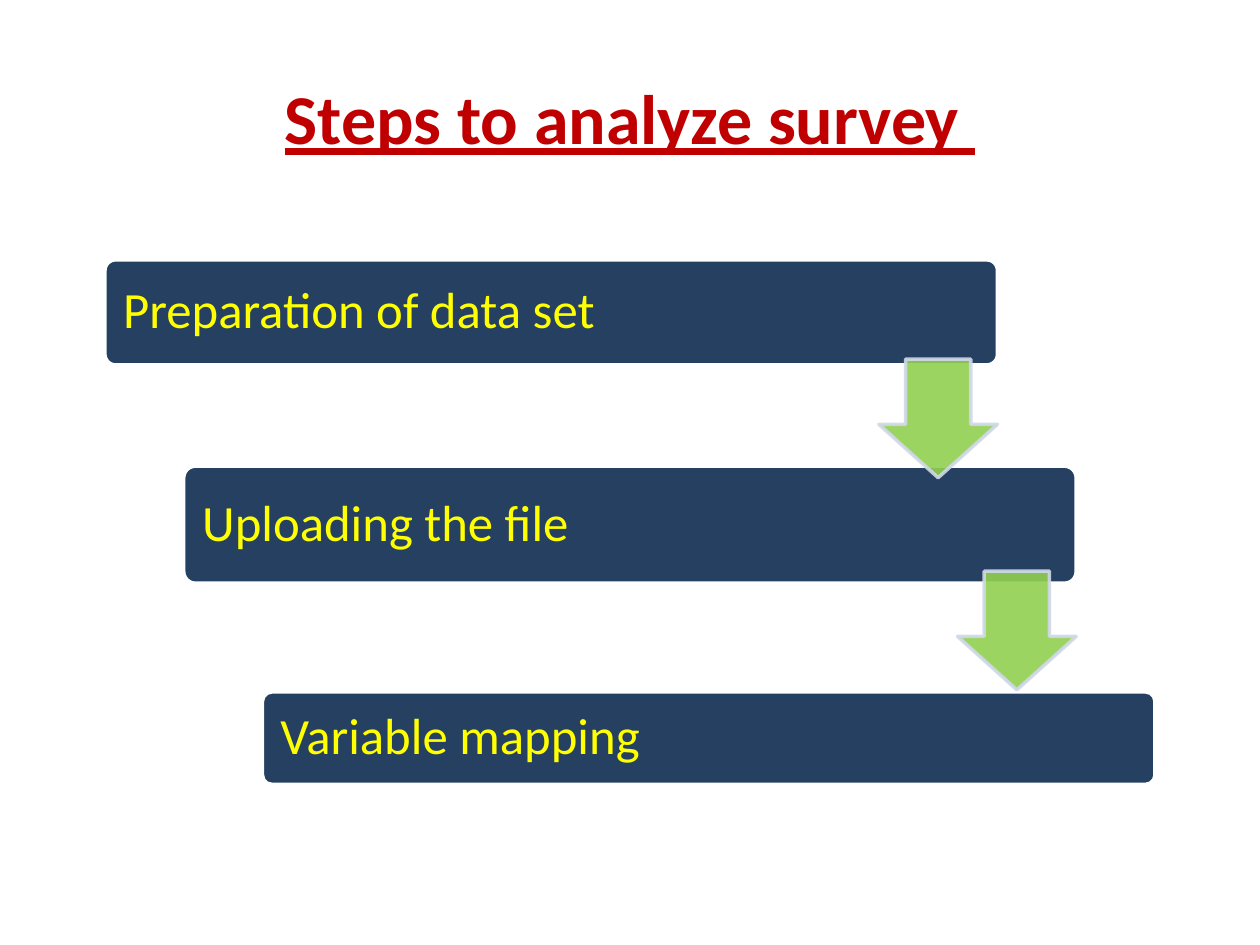
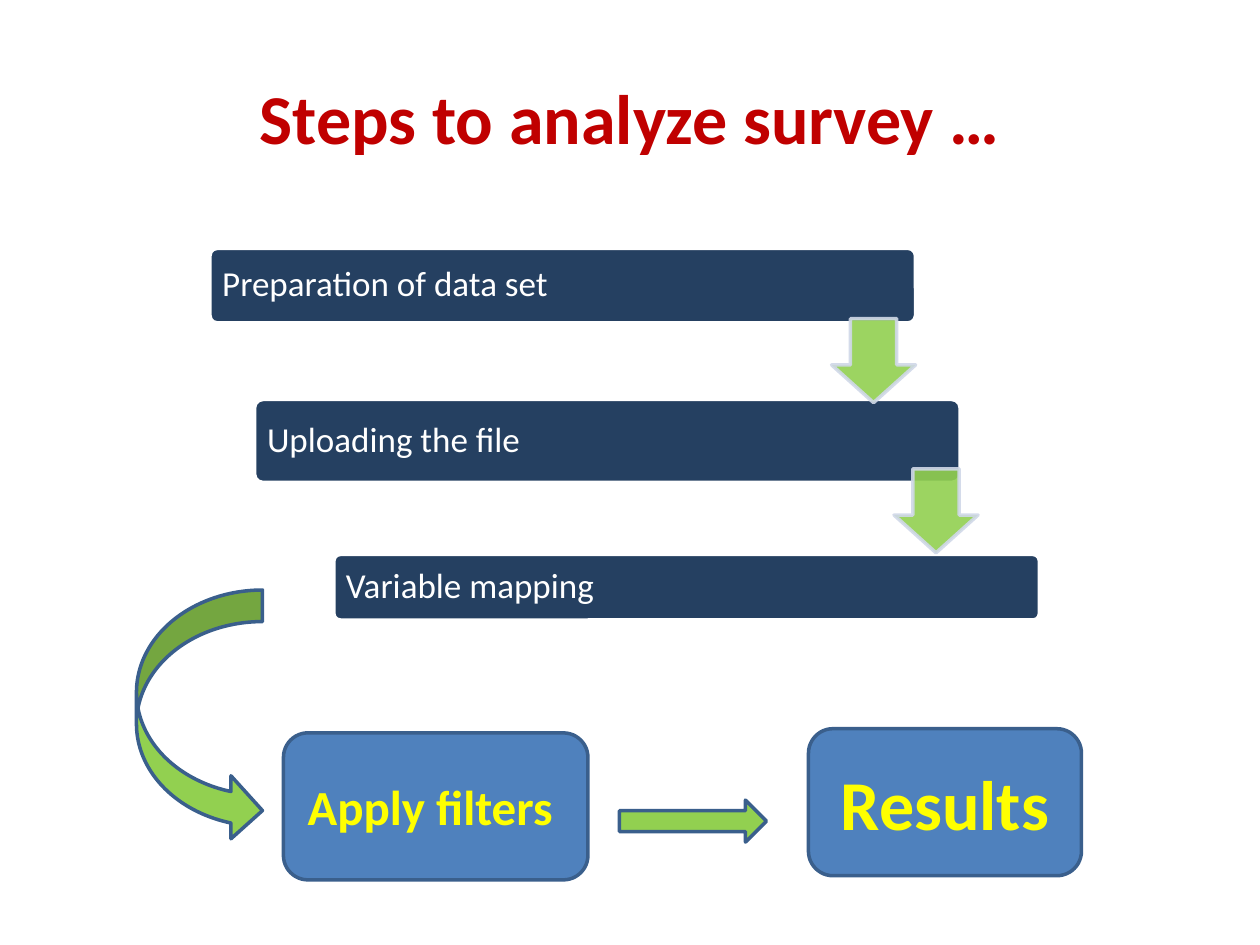
from lxml import etree
from pptx import Presentation
from pptx.dml.color import RGBColor
from pptx.enum.shapes import MSO_SHAPE
from pptx.enum.text import MSO_ANCHOR, PP_ALIGN
from pptx.oxml.ns import qn
from pptx.util import Inches, Pt

ROUNDED = MSO_SHAPE.ROUNDED_RECTANGLE
DOWN_ARROW = MSO_SHAPE.DOWN_ARROW
RIGHT_ARROW = MSO_SHAPE.RIGHT_ARROW
CURVED_ARROW = MSO_SHAPE.CURVED_RIGHT_ARROW
MIDDLE = MSO_ANCHOR.MIDDLE
LEFT, CENTER = PP_ALIGN.LEFT, PP_ALIGN.CENTER

WHITE = RGBColor(0xFF, 0xFF, 0xFF)
RED = RGBColor(0xC0, 0x00, 0x00)
YELLOW = RGBColor(0xFF, 0xFF, 0x00)
NAVY = RGBColor(0x25, 0x40, 0x61)
BLUE = RGBColor(0x4F, 0x81, 0xBD)
BLUE_EDGE = RGBColor(0x3A, 0x5F, 0x8C)
GREEN = RGBColor(0x92, 0xD0, 0x50)
PALE_EDGE = RGBColor(0xD0, 0xD8, 0xE8)

FONT = "Calibri"
CELL = Inches(1) / 12  # the slide is a grid of 120 columns by 90 rows
STEPS = ["Preparation of data set", "Uploading the file", "Variable mapping"]


def cells(*counts):
    return [round(count * CELL) for count in counts]


def write(shape, text, size, color, align=CENTER, bold=False, underline=False):
    frame = shape.text_frame
    frame.word_wrap = True
    frame.vertical_anchor = MIDDLE
    frame.text = text
    para = frame.paragraphs[0]
    para.alignment = align
    font = para.runs[0].font
    font.name, font.size, font.color.rgb = FONT, Pt(size), color
    font.bold, font.underline = bold, underline


def add_title(page, text, underline=False):
    box = page.shapes.add_textbox(*cells(6, 3.6, 108, 15))
    write(box, text, 40, RED, bold=True, underline=underline)


def add_block(page, kind, area, fill, edge, adjustments=()):
    """Add a filled preset shape; area is left, top, width, height in cells."""
    block = page.shapes.add_shape(kind, *cells(*area))
    block.shadow.inherit = False
    block.fill.solid()
    block.fill.fore_color.rgb = fill
    block.line.color.rgb = edge
    block.line.width = Pt(2)
    for index, value in enumerate(adjustments):
        block.adjustments[index] = value
    return block


def add_step(page, text, area, size, color, inset):
    step = add_block(page, ROUNDED, area, NAVY, WHITE, [0.1])
    write(step, text, size, color, LEFT)
    frame = step.text_frame
    frame.margin_left = frame.margin_right = Inches(inset)
    frame.margin_top = frame.margin_bottom = Inches(inset)
    frame.paragraphs[0].line_spacing = 0.9


def add_down_arrow(page, right, top, size):
    """Add a slightly transparent arrow whose right edge is at right."""
    arrow = add_block(page, DOWN_ARROW, (right - size, top, size, size),
                      GREEN, PALE_EDGE, [0.55, 0.45])
    for color in arrow.element.spPr.iter(qn("a:srgbClr")):
        etree.SubElement(color, qn("a:alpha")).set("val", "90000")


def add_staircase(page, lefts, tops, heights, width, arrows, arrow_size,
                  text_size, color, inset):
    """Add the steps; arrows holds (overhang past its step, top) pairs."""
    for text, left, top, height in zip(STEPS, lefts, tops, heights):
        add_step(page, text, (left, top, width, height), text_size, color, inset)
    for left, (overhang, top) in zip(lefts, arrows):
        add_down_arrow(page, left + width + overhang, top, arrow_size)


def add_outcome(page, text, area, size):
    outcome = add_block(page, ROUNDED, area, BLUE, BLUE_EDGE)
    write(outcome, text, size, YELLOW, bold=True)


def build_steps(page):
    add_title(page, "Steps to analyze survey ", underline=True)
    add_staircase(page, lefts=[10 + 7.5 * i for i in range(3)],
                  tops=[24.75, 44.4, 65.9], heights=[10, 11.15, 8.8],
                  width=85, arrows=[(0, 34.2), (0, 54.4)], arrow_size=11.3,
                  text_size=29, color=YELLOW, inset=0.12)


def build_results(page):
    add_title(page, "Steps to analyze survey …")
    add_staircase(page, lefts=[20, 24.25, 31.8],
                  tops=[23.65, 38.05, 52.8], heights=[7.1, 7.9, 6.25],
                  width=67.2, arrows=[(0, 30.35), (1.7, 44.65)], arrow_size=8,
                  text_size=20, color=WHITE, inset=0.08)
    add_outcome(page, "Apply filters ", (27, 69.8, 29, 14), 28)
    add_block(page, CURVED_ARROW, (13, 56.2, 12, 24), GREEN, BLUE_EDGE)
    add_block(page, RIGHT_ARROW, (59, 76.2, 14, 4), GREEN, BLUE_EDGE)
    add_outcome(page, "Results", (77, 69.4, 26, 14), 40)


def main():
    deck = Presentation()
    deck.slide_width, deck.slide_height = cells(120, 90)
    blank = deck.slide_layouts[6]
    for build in (build_steps, build_results):
        build(deck.slides.add_slide(blank))
    deck.save("out.pptx")


if __name__ == "__main__":
    main()
